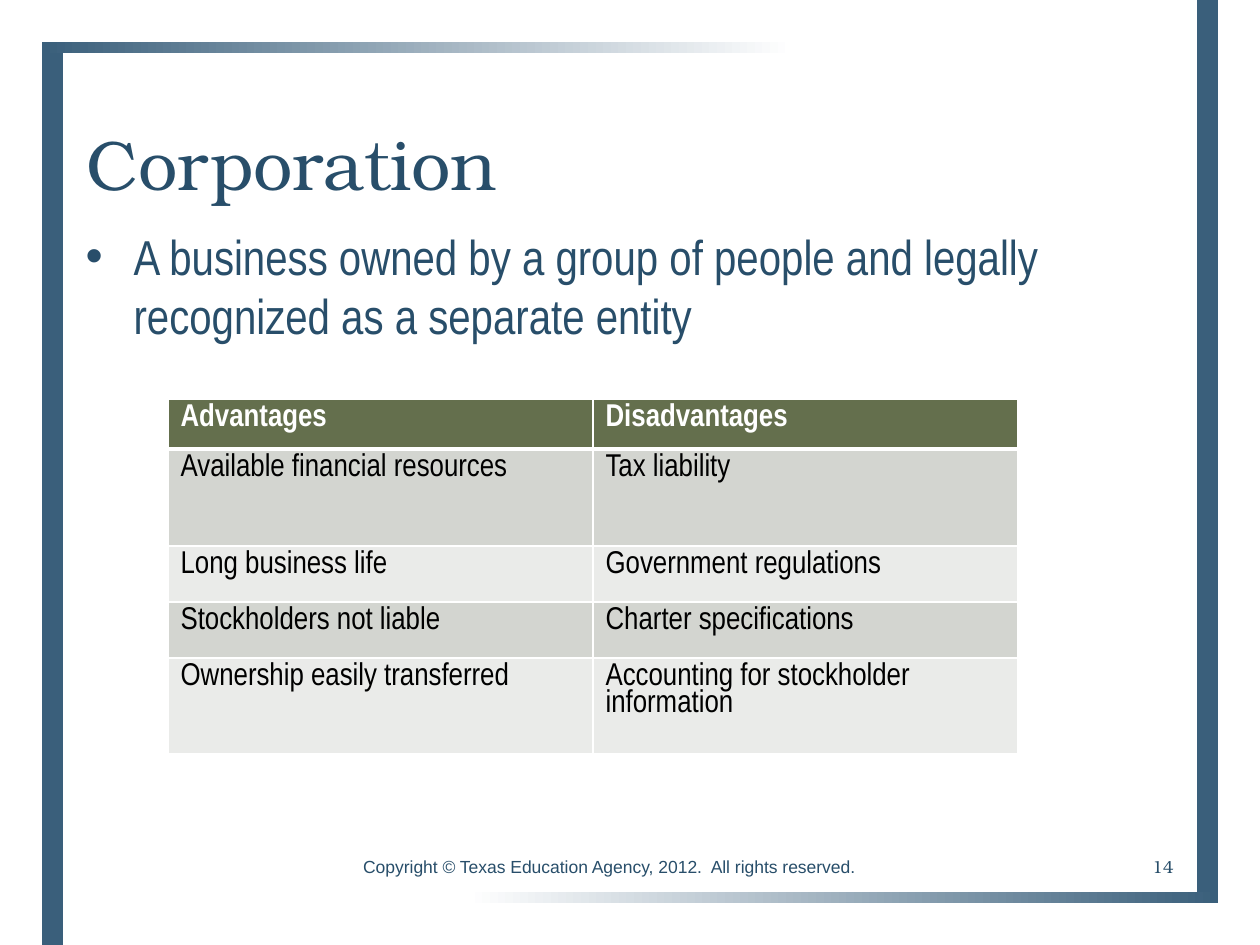
from lxml.etree import SubElement
from pptx import Presentation
from pptx.dml.color import RGBColor
from pptx.enum.shapes import MSO_SHAPE
from pptx.enum.text import MSO_ANCHOR as Anchor, MSO_AUTO_SIZE as AutoSize, PP_ALIGN as Align
from pptx.oxml import parse_xml
from pptx.oxml.ns import nsdecls, qn
from pptx.util import Emu, Pt

NAVY = RGBColor(0x28, 0x4E, 0x6A)
STEEL = RGBColor(0x3A, 0x5F, 0x7B)
OLIVE = RGBColor(0x64, 0x6F, 0x4D)
DARK_BAND = RGBColor(0xD3, 0xD5, 0xD0)
LIGHT_BAND = RGBColor(0xEA, 0xEB, 0xE9)
WHITE = RGBColor(0xFF, 0xFF, 0xFF)
BLACK = RGBColor(0x00, 0x00, 0x00)
SERIF, NARROW, SANS = "TeX Gyre Bonum", "Arial Narrow", "Arial"

TITLE = "Corporation"
DEFINITION = "A business owned by a group of people and legally recognized as a separate entity"
ROWS = [
    (50, "Advantages", "Disadvantages"),
    (97, "Available financial resources", "Tax liability"),
    (56, "Long business life", "Government regulations"),
    (56, "Stockholders not liable", "Charter specifications"),
    (96, "Ownership easily transferred", "Accounting for stockholder information"),
]
SIDE_BARS = [(1197, 0, 21, 892), (42, 53, 21, 892)]
FADING_BARS = [((63, 892, 1155, 11), 180), ((42, 42, 1155, 11), 0)]
FOOTERS = [
    ("14", (892, 842, 294, 50), SERIF, Align.RIGHT),
    ("Copyright © Texas Education Agency, 2012.  All rights reserved.",
     (336, 842, 546, 50), SANS, Align.CENTER),
]
COLUMN_WIDTH = 425


def px(value):
    return Emu(round(value * 914400 / 126))


def place(shape, box):
    shape.left, shape.top, shape.width, shape.height = map(px, box)


def style(para, size, name, color, bold=False):
    for run in para.runs:
        font = run.font
        font.size, font.name, font.bold = Pt(size), name, bold
        font.color.rgb = color


def add_bar(page, box):
    bar = page.shapes.add_shape(MSO_SHAPE.RECTANGLE, *map(px, box))
    bar.shadow.inherit = False
    bar.line.fill.background()
    return bar


def add_bars(page):
    for box in SIDE_BARS:
        fill = add_bar(page, box).fill
        fill.solid()
        fill.fore_color.rgb = STEEL
    for box, angle in FADING_BARS:
        fill = add_bar(page, box).fill
        fill.gradient()
        fill.gradient_angle = angle
        for stop, (color, position) in zip(fill.gradient_stops, [(STEEL, 0), (WHITE, 0.65)]):
            stop.color.rgb = color
            stop.position = position


def fill_placeholder(shape, box, text, size, name, anchor):
    place(shape, box)
    frame = shape.text_frame
    frame.text = text
    frame.word_wrap = True
    frame.auto_size = AutoSize.NONE
    frame.vertical_anchor = anchor
    para = frame.paragraphs[0]
    para.alignment = Align.LEFT
    para.space_before = Pt(0)
    style(para, size, name, NAVY)
    return para


def add_bullet(para):
    props = para._p.get_or_add_pPr()
    props.set("marL", str(px(48)))
    props.set("indent", str(-px(48)))
    SubElement(props, qn("a:buFont")).set("typeface", SANS)
    SubElement(props, qn("a:buChar")).set("char", "•")


def set_borders(cell, widths):
    props = cell._tc.get_or_add_tcPr()
    for index, (side, width) in enumerate(widths.items()):
        props.insert(index, parse_xml(
            f'<a:ln{side} {nsdecls("a")} w="{Pt(width)}"><a:solidFill>'
            f'<a:srgbClr val="{WHITE}"/></a:solidFill></a:ln{side}>'))


def add_comparison(page):
    height = sum(row[0] for row in ROWS)
    box = (168, 399, 2 * COLUMN_WIDTH, height)
    table = page.shapes.add_table(len(ROWS), 2, *map(px, box)).table
    for column in table.columns:
        column.width = px(COLUMN_WIDTH)
    for r, (row_height, *texts) in enumerate(ROWS):
        table.rows[r].height = px(row_height)
        header = r == 0
        band = OLIVE if header else DARK_BAND if r % 2 else LIGHT_BAND
        for c, text in enumerate(texts):
            cell = table.cell(r, c)
            cell.text = text
            cell.fill.solid()
            cell.fill.fore_color.rgb = band
            set_borders(cell, {"L": 1, "R": 1, "T": 3 if r == 1 else 1, "B": 3 if header else 1})
            para = cell.text_frame.paragraphs[0]
            para.line_spacing = 0.9
            style(para, 18, NARROW, WHITE if header else BLACK, header)


def add_footers(page):
    for text, box, name, alignment in FOOTERS:
        frame = page.shapes.add_textbox(*map(px, box)).text_frame
        frame.text = text
        frame.word_wrap = True
        frame.vertical_anchor = Anchor.MIDDLE
        para = frame.paragraphs[0]
        para.alignment = alignment
        style(para, 10, name, NAVY)


def main():
    deck = Presentation()
    deck.slide_width, deck.slide_height = px(1260), px(945)
    page = deck.slides.add_slide(deck.slide_layouts[1])
    add_bars(page)
    fill_placeholder(page.shapes.title, (74, 63, 1113, 148), TITLE, 40, SERIF, Anchor.BOTTOM)
    body = page.placeholders[1]
    add_bullet(fill_placeholder(body, (73, 220, 1113, 607), DEFINITION, 28, NARROW, Anchor.TOP))
    add_comparison(page)
    add_footers(page)
    deck.save("out.pptx")


if __name__ == "__main__":
    main()
